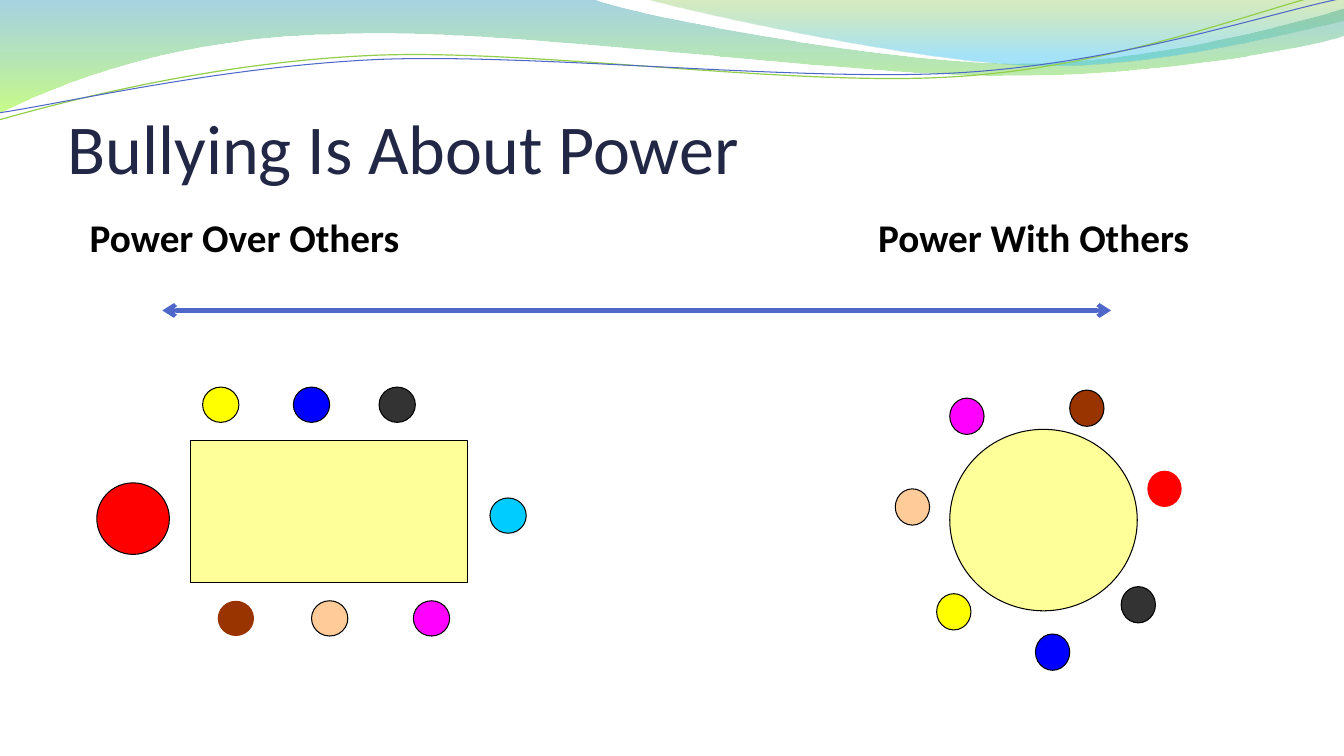
import math

import pptx
import pptx.dml.color
import pptx.enum.shapes
import pptx.enum.text
import pptx.oxml
import pptx.oxml.ns
import pptx.util
from pptx.util import Inches

COLORS = {
    "navy": "212745", "indigo": "4E67C8", "lime": "93CE48", "black": "000000",
    "table": "FFFF99", "red": "FF0000", "yellow": "FFFF00", "blue": "0000FF",
    "brown": "993300", "peach": "FFCC99", "magenta": "FF00FF",
    "charcoal": "333333", "sky": "00CCFF", "teal": "3B9CBF",
    "spring": "9CFA24", "leaf": "7EBE2C", "aqua": "39C1F1",
}
TITLE = "Bullying Is About Power"
HEADINGS = "Power Over Others\tPower With Others"
HEADING_TAB = 7.82
TILT = -2.7

WAVES = [
    {"start": (-0.02, 0), "steps": [
        [(5.87, -0.01)],
        [(6.34, 0.17), (8.84, 0.63), (10.11, 0.63)],
        [(11.37, 0.63), (12.77, 0.26), (13.33, 0.09)],
        [(13.34, 0.36)],
        [(13.11, 0.44), (11.59, 0.76), (9.94, 0.75)],
        [(8.29, 0.75), (5.09, 0.28), (3.43, 0.34)],
        [(1.72, 0.36), (0.61, 0.83), (-0.02, 1.13)]],
     "stops": [(0, "teal", 45), (1, "spring", 55)]},
    {"start": (6.38, -0.01), "steps": [
        [(6.79, 0.11), (9.09, 0.62), (10.25, 0.65)],
        [(11.4, 0.69), (12.82, 0.32), (13.33, 0.21)],
        [(13.33, 0)]],
     "stops": [(0, "leaf", 30), (0.8, "aqua", 45)]},
    {"start": (-0.01, 1.19), "steps": [
        [(0.63, 1.01), (2.1, 0.62), (3.69, 0.55)],
        [(5.27, 0.48), (7.89, 0.87), (9.49, 0.76)],
        [(11.1, 0.66), (12.51, 0.08), (13.3, -0.1)]],
     "line": ("lime", 0.85), "pivot": (6.65, 0.57)},
    {"start": (-0.01, 1.12), "steps": [
        [(0.62, 1.03), (2.18, 0.66), (3.77, 0.59)],
        [(5.37, 0.53), (7.96, 0.82), (9.55, 0.72)],
        [(11.14, 0.62), (12.55, 0.14), (13.33, -0.02)]],
     "line": ("indigo", 0.75), "pivot": (6.67, 0.59)},
]
TABLES = [("RECTANGLE", (1.89, 4.37, 2.75, 1.41)),
          ("OVAL", (9.42, 4.26, 1.86, 1.8))]
SEATS = [
    ((0.72, 0.71), [(0.96, 4.79, "red", True)]),
    ((0.36, 0.35), [
        (2.01, 3.84, "yellow", True), (2.91, 3.84, "blue", True),
        (2.16, 5.96, "brown", False), (3.09, 5.96, "peach", True),
        (4.1, 5.96, "magenta", True), (3.76, 3.84, "charcoal", True),
        (4.86, 4.94, "sky", True)]),
    ((0.34, 0.36), [
        (9.42, 3.95, "magenta", True), (8.88, 4.85, "peach", True),
        (9.29, 5.89, "yellow", True), (10.27, 6.29, "blue", True),
        (10.61, 3.87, "brown", True), (11.38, 4.67, "red", False),
        (11.12, 5.82, "charcoal", True)]),
]


def rgb(name):
    """Return the named colour."""
    return pptx.dml.color.RGBColor.from_string(COLORS[name])


def apply(target, values):
    """Set every attribute in a dict of format values."""
    for name, value in values.items():
        setattr(target, name, value)


def make_child(tag, **attributes):
    """Return a drawing element with its attributes."""
    child = pptx.oxml.parse_xml(f"<a:{tag} {pptx.oxml.ns.nsdecls('a')}/>")
    for name, value in attributes.items():
        child.set(name, str(value))
    return child


def set_line(line, color, width):
    """Give a line its colour and width in points."""
    line.color.rgb = rgb(color)
    line.width = pptx.util.Pt(width)


def level(point, pivot):
    """Turn a point about the pivot to undo the tilt."""
    angle = math.radians(-TILT)
    across, down = point[0] - pivot[0], point[1] - pivot[1]
    return (pivot[0] + across * math.cos(angle) - down * math.sin(angle),
            pivot[1] + across * math.sin(angle) + down * math.cos(angle))


def bend(shape, steps):
    """Join each three segments of a curved step into one Bézier curve."""
    segments = iter(list(shape._element.iter(pptx.oxml.ns.qn("a:lnTo"))))
    for step in steps:
        group = [next(segments) for point in step]
        if len(group) == 3:
            curve = make_child("cubicBezTo")
            group[0].addprevious(curve)
            for segment in group:
                curve.append(segment[0])
                segment.getparent().remove(segment)


def add_wave(page, wave):
    """Draw one filled or outlined wave."""
    filled = "stops" in wave
    points = [wave["start"], *(point for step in wave["steps"] for point in step)]
    if "pivot" in wave:
        points = [level(point, wave["pivot"]) for point in points]
    first, *rest = [(Inches(x), Inches(y)) for x, y in points]
    builder = page.shapes.build_freeform(*first)
    builder.add_line_segments(rest, close=filled)
    shape = builder.convert_to_shape()
    bend(shape, wave["steps"])
    shape.shadow.inherit = False
    if not filled:
        shape.rotation = TILT
        shape.fill.background()
        set_line(shape.line, *wave["line"])
        return
    shape.line.fill.background()
    shape.fill.gradient()
    shape.fill.gradient_angle = 270
    for stop, (position, color, opacity) in zip(shape.fill.gradient_stops, wave["stops"]):
        stop.position = position
        stop.color.rgb = rgb(color)
    tags = shape._element.spPr.iter(pptx.oxml.ns.qn("a:srgbClr"))
    for tag, (position, color, opacity) in zip(tags, wave["stops"]):
        tag.append(make_child("alpha", val=opacity * 1000))


def add_figure(page, kind, area, color, outlined=True):
    """Draw a table or a seat."""
    preset = getattr(pptx.enum.shapes.MSO_SHAPE, kind)
    shape = page.shapes.add_shape(preset, *map(Inches, area))
    shape.shadow.inherit = False
    shape.fill.solid()
    shape.fill.fore_color.rgb = rgb(color)
    if outlined:
        set_line(shape.line, "black", 0.75)
    else:
        shape.line.fill.background()


def add_text(page, text, area, frame, font, color, tab=None):
    """Write one line of text in a box."""
    box = page.shapes.add_textbox(*map(Inches, area))
    apply(box.text_frame, {"word_wrap": True, "margin_left": 0, "margin_right": 0,
                           "margin_top": 0, "margin_bottom": 0, **frame})
    para = box.text_frame.paragraphs[0]
    if tab:
        stops = make_child("tabLst")
        stops.append(make_child("tab", pos=Inches(tab), algn="l"))
        para._p.get_or_add_pPr().append(stops)
    span = para.add_run()
    span.text = text
    apply(span.font, {"name": "Calibri", **font})
    span.font.color.rgb = rgb(color)


def add_arrow(page):
    """Draw the two-headed arrow between the headings."""
    arrow = page.shapes.add_connector(pptx.enum.shapes.MSO_CONNECTOR.STRAIGHT,
                                      *map(Inches, (1.61, 3.08, 11.02, 3.08)))
    set_line(arrow.line, "indigo", 3)
    for end in ("headEnd", "tailEnd"):
        arrow.line._get_or_add_ln().append(make_child(end, type="arrow"))
    arrow._element.spPr.append(make_child("effectLst"))


def main():
    """Build the slide and save it."""
    deck = pptx.Presentation()
    apply(deck, {"slide_width": Inches(13.33), "slide_height": Inches(7.5)})
    page = deck.slides.add_slide(deck.slide_layouts[6])
    for wave in WAVES:
        add_wave(page, wave)
    add_text(page, TITLE, (0.67, 0.77, 12, 1.1),
             {"vertical_anchor": pptx.enum.text.MSO_ANCHOR.BOTTOM},
             {"size": pptx.util.Pt(50)}, "navy")
    for kind, area in TABLES:
        add_figure(page, kind, area, "table")
    for size, seats in SEATS:
        for left, top, color, outlined in seats:
            add_figure(page, "OVAL", (left, top, *size), color, outlined)
    add_arrow(page)
    add_text(page, HEADINGS, (0.89, 2.12, 11.4, 0.48), {},
             {"size": pptx.util.Pt(28), "bold": True}, "black", HEADING_TAB)
    deck.save("out.pptx")


if __name__ == "__main__":
    main()
